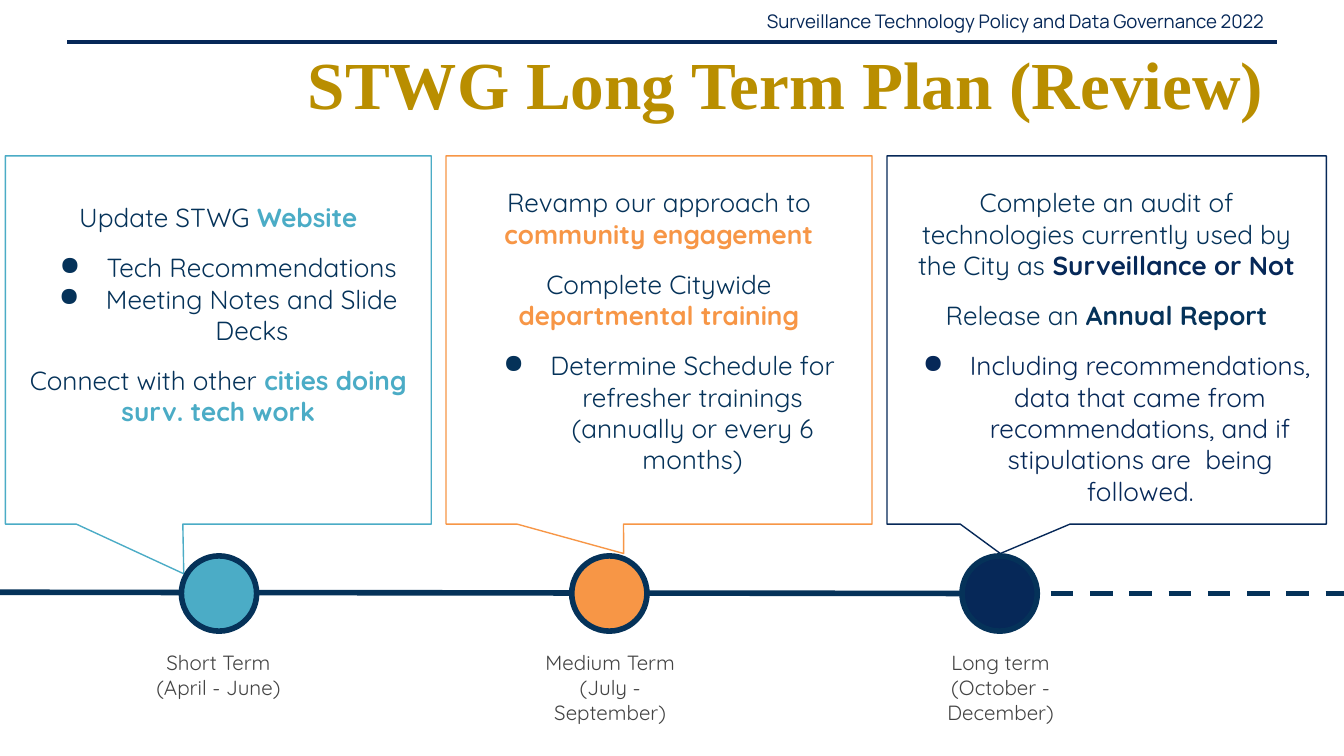
from dataclasses import dataclass
from typing import NamedTuple

from lxml.etree import SubElement
from pptx import Presentation
from pptx.dml.color import RGBColor
from pptx.enum.dml import MSO_LINE
from pptx.enum.shapes import MSO_CONNECTOR, MSO_SHAPE
from pptx.enum.text import MSO_ANCHOR, PP_ALIGN
from pptx.oxml.ns import qn
from pptx.util import Pt


@dataclass(frozen=True)
class Theme:
    navy: str = "062858"
    ink: str = "053259"
    teal: str = "4BACC6"
    orange: str = "F79646"
    gold: str = "B98E00"
    grey: str = "434343"
    sans: str = "Quicksand"
    head: str = "Manrope"
    serif: str = "Times New Roman"
    title: float = 36
    body: float = 14
    label: float = 11
    small: float = 10


class Box(NamedTuple):
    left: float
    top: float
    width: float
    height: float


class Para(NamedTuple):
    plain: str
    strong: str = ""
    tint: str = ""
    bullet: bool = False
    color: str = ""
    gap: float = 0


class Phase(NamedTuple):
    color: str
    card: Box
    tip: tuple[float, float]
    text: Box
    paras: list[Para]
    label: Box
    name: str


THEME = Theme()
TOP, TALL = 83.5, 197.3
LABEL, LOW = 341.3, 41
DOT, FIRST, STEP = 40.3, 97.2, 209.1
AXIS = 318

PHASES = [
    Phase(
        THEME.teal, Box(2.9, TOP, 228.2, TALL), (-0.081, 0.635),
        Box(2.9, 100.8, 228.2, 163.4),
        [
            Para("Update STWG ", "Website", THEME.teal),
            Para("Tech Recommendations", bullet=True, gap=10),
            Para("Meeting Notes and Slide Decks", bullet=True),
            Para("Connect with other ", "cities doing surv. tech work", THEME.teal, gap=10),
        ],
        Box(70.6, LABEL, 92.9, LOW), "Short Term\n(April - June)",
    ),
    Phase(
        THEME.orange, Box(239, TOP, 228.2, TALL), (-0.083, 0.58),
        Box(239, 92.9, 228.2, 153.4),
        [
            Para("Revamp our approach to ", "community engagement", THEME.orange),
            Para("Complete Citywide ", "departmental training", THEME.orange, gap=10),
            Para("Determine Schedule for refresher trainings (annually or every 6 months)",
                 bullet=True, gap=10),
        ],
        Box(273.6, LABEL, 106.6, LOW), "Medium Term\n(July - September)",
    ),
    Phase(
        THEME.navy, Box(475.2, TOP, 235.4, TALL), (-0.242, 0.58),
        Box(475.2, 92.9, 235.4, 187.2),
        [
            Para("Complete an audit of technologies currently used by the City as",
                 " Surveillance or Not", THEME.navy),
            Para("Release an ", "Annual Report", THEME.ink, gap=10),
            Para("Including recommendations, data that came from recommendations, "
                 "and if stipulations are  being followed.",
                 bullet=True, color=THEME.navy, gap=10),
        ],
        Box(474.5, LABEL, 123.1, LOW), "Long term\n(October - December)",
    ),
]


def rgb(color: str) -> RGBColor:
    return RGBColor.from_string(color)


def style(run, font: str, size: float, color: str, bold: bool = False) -> None:
    run.font.name = font
    run.font.size = Pt(size)
    run.font.bold = bold
    run.font.color.rgb = rgb(color)


def add_frame(slide, box: Box, pad: float = 7.2):
    frame = slide.shapes.add_textbox(*map(Pt, box)).text_frame
    frame.word_wrap = True
    frame.margin_left = frame.margin_right = Pt(7.2)
    frame.margin_top = frame.margin_bottom = Pt(pad)
    return frame


def add_text(slide, box: Box, text: str, font: str, size: float, color: str,
             bold: bool = False, align=PP_ALIGN.RIGHT, anchor=MSO_ANCHOR.MIDDLE,
             pad: float = 3.6) -> None:
    frame = add_frame(slide, box, pad)
    frame.vertical_anchor = anchor
    frame.text = text
    for para in frame.paragraphs:
        para.alignment = align
        for run in para.runs:
            style(run, font, size, color, bold)


def add_bullet(para, color: str) -> None:
    props = para._p.get_or_add_pPr()
    props.set("marL", str(Pt(36)))
    props.set("indent", str(-Pt(25.2)))
    paint = SubElement(props, qn("a:buClr"))
    SubElement(paint, qn("a:srgbClr")).set("val", color)
    SubElement(props, qn("a:buChar")).set("char", "●")


def add_body(slide, box: Box, paras: list[Para]) -> None:
    frame = add_frame(slide, box)
    for spot, item in enumerate(paras):
        para = frame.add_paragraph() if spot else frame.paragraphs[0]
        color = item.color or THEME.ink
        para.text = item.plain
        para.alignment = PP_ALIGN.CENTER
        para.space_before = Pt(item.gap)
        style(para.runs[0], THEME.sans, THEME.body, color)
        if item.strong:
            run = para.add_run()
            run.text = item.strong
            style(run, THEME.sans, THEME.body, item.tint, True)
        if item.bullet:
            add_bullet(para, color)


def add_shape(slide, kind, box: Box, line: str, width: float, fill: str = ""):
    shape = slide.shapes.add_shape(kind, *map(Pt, box))
    shape.shadow.inherit = False
    if fill:
        shape.fill.solid()
        shape.fill.fore_color.rgb = rgb(fill)
    else:
        shape.fill.background()
    shape.line.color.rgb = rgb(line)
    shape.line.width = Pt(width)
    return shape


def add_line(slide, start: tuple[float, float], end: tuple[float, float],
             color: str, width: float, dash: bool = False) -> None:
    line = slide.shapes.add_connector(MSO_CONNECTOR.STRAIGHT, *map(Pt, start + end))
    line.line.color.rgb = rgb(color)
    line.line.width = Pt(width)
    if dash:
        line.line.dash_style = MSO_LINE.DASH
    SubElement(line._element.spPr, qn("a:effectLst"))


def main() -> None:
    deck = Presentation()
    deck.slide_width, deck.slide_height = Pt(720), Pt(405)
    slide = deck.slides.add_slide(deck.slide_layouts[6])

    add_line(slide, (36, 22.5), (684, 22.5), THEME.navy, 2.25)
    add_text(slide, Box(375, 0.7, 309, 21.6),
             "Surveillance Technology Policy and Data Governance 2022",
             THEME.head, THEME.small, THEME.navy)
    add_text(slide, Box(18, 21, 666, 46), "STWG Long Term Plan (Review)",
             THEME.serif, THEME.title, THEME.gold, True)

    for phase in PHASES:
        card = add_shape(slide, MSO_SHAPE.RECTANGULAR_CALLOUT, phase.card, phase.color, 0.75)
        card.adjustments[0], card.adjustments[1] = phase.tip

    add_line(slide, (563, AXIS), (720.7, AXIS), THEME.ink, 3, True)
    add_line(slide, (-0.7, AXIS - 0.7), (556, AXIS), THEME.ink, 3)

    for spot, phase in enumerate(PHASES):
        dot = Box(FIRST + spot * STEP, AXIS - DOT / 2, DOT, DOT)
        add_shape(slide, MSO_SHAPE.OVAL, dot, THEME.ink, 3, phase.color)
        add_body(slide, phase.text, phase.paras)
        add_text(slide, phase.label, phase.name, THEME.sans, THEME.label, THEME.grey,
                 align=PP_ALIGN.CENTER, anchor=MSO_ANCHOR.TOP, pad=7.2)

    deck.save("out.pptx")


if __name__ == "__main__":
    main()
